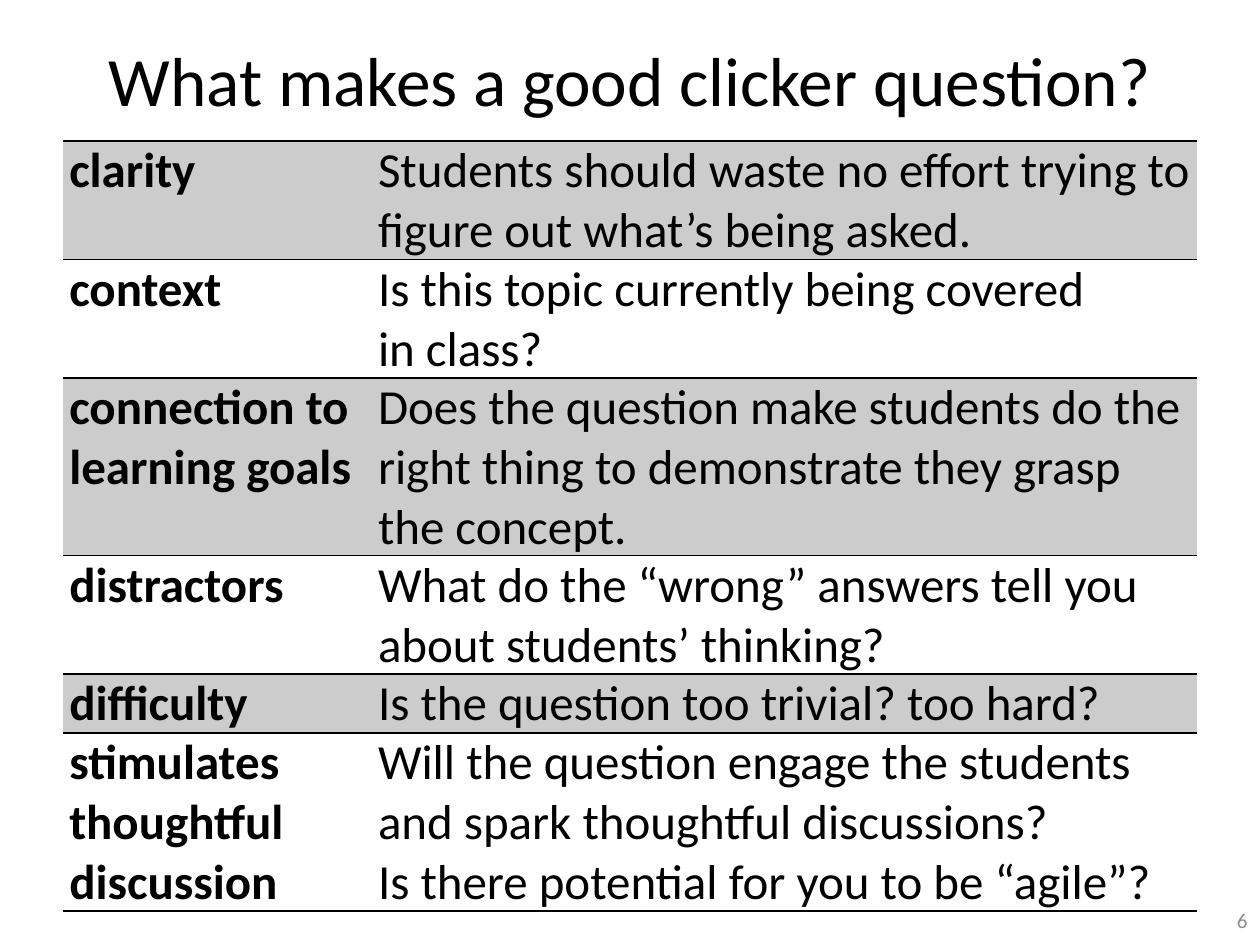
"""Build the slide listing what makes a good clicker question."""
import pptx
import pptx.dml.color
import pptx.enum.text
import pptx.util
from lxml import etree
from pptx.oxml.ns import qn
from pptx.util import Inches

BLACK = pptx.dml.color.RGBColor(0x00, 0x00, 0x00)
GREY = pptx.dml.color.RGBColor(0x8C, 0x8C, 0x8C)
BAND = pptx.dml.color.RGBColor(0xCC, 0xCC, 0xCC)
ALIGN = pptx.enum.text.PP_ALIGN
ANCHOR = pptx.enum.text.MSO_ANCHOR

LINE_HEIGHT = 0.47
CRITERIA = [
    ("clarity", "Students should waste no effort trying to figure out what’s being asked.", 2),
    ("context", "Is this topic currently being covered \nin class?", 2),
    ("connection to learning goals",
     "Does the question make students do the right thing to demonstrate they grasp the concept.", 3),
    ("distractors", "What do the “wrong” answers tell you about students’ thinking?", 2),
    ("difficulty", "Is the question too trivial? too hard?", 1),
    ("stimulates thoughtful discussion",
     "Will the question engage the students and spark thoughtful discussions?\n"
     "Is there potential for you to be “agile”?", 3),
]


class SlideBuilder:
    """Hold the style and the current slide."""

    font = "Calibri"

    def __init__(self, prs):
        self.s = prs.slides.add_slide(prs.slide_layouts[5])

    def set_text(self, tf, text, size, color=BLACK, bold=False, align=ALIGN.LEFT):
        """Fill a text frame with one formatted paragraph."""
        tf.word_wrap = True
        p = tf.paragraphs[0]
        p.text = text
        p.alignment = align
        for r in p.runs:
            r.font.name = self.font
            r.font.size = pptx.util.Pt(size)
            r.font.bold = bold
            r.font.color.rgb = color

    def title(self, text, left, top, width, height):
        """Place the title placeholder."""
        sp = self.s.shapes.title
        sp.left, sp.top, sp.width, sp.height = map(Inches, (left, top, width, height))
        sp.text_frame.vertical_anchor = ANCHOR.MIDDLE
        self.set_text(sp.text_frame, text, 39.6, align=ALIGN.CENTER)

    def page_number(self, text, left, top, width, height):
        """Add the page number."""
        sp = self.s.shapes.add_textbox(*map(Inches, (left, top, width, height)))
        sp.text_frame.vertical_anchor = ANCHOR.MIDDLE
        self.set_text(sp.text_frame, text, 12, GREY, align=ALIGN.RIGHT)

    def borders(self, cell):
        """Rule a cell above and below only."""
        tc_pr = cell._tc.get_or_add_tcPr()
        for side in ("lnL", "lnR", "lnT", "lnB"):
            ln = etree.SubElement(tc_pr, qn(f"a:{side}"), w=str(pptx.util.Pt(1)))
            if side in ("lnL", "lnR"):
                etree.SubElement(ln, qn("a:noFill"))
            else:
                fill = etree.SubElement(ln, qn("a:solidFill"))
                etree.SubElement(fill, qn("a:srgbClr"), val=str(BLACK))

    def table(self, rows, left, top, widths):
        """Add a banded table with bold row names."""
        height = LINE_HEIGHT * sum(lines for _, _, lines in rows)
        table = self.s.shapes.add_table(
            len(rows), len(widths), Inches(left), Inches(top),
            Inches(sum(widths)), Inches(height)).table
        table.first_row = table.horz_banding = False
        for column, width in zip(table.columns, widths):
            column.width = Inches(width)
        for i, (name, question, lines) in enumerate(rows):
            table.rows[i].height = Inches(LINE_HEIGHT * lines)
            for j, text in enumerate((name, question)):
                cell = table.cell(i, j)
                cell.margin_left = Inches(0.05 if j == 0 else 0)
                cell.margin_right = cell.margin_top = cell.margin_bottom = 0
                cell.vertical_anchor = ANCHOR.MIDDLE if j == 1 and i >= 4 else ANCHOR.TOP
                self.borders(cell)
                if i % 2 == 0:
                    cell.fill.solid()
                    cell.fill.fore_color.rgb = BAND
                else:
                    cell.fill.background()
                self.set_text(cell.text_frame, text, 28, bold=j == 0)


def main():
    """Build and save the presentation."""
    prs = pptx.Presentation()
    prs.slide_width, prs.slide_height = Inches(10), Inches(7.5)
    slide = SlideBuilder(prs)
    slide.title("What makes a good clicker question?", 0.5, 0, 9, 1.25)
    slide.page_number("6", 7.67, 7.1, 2.33, 0.4)
    slide.table(CRITERIA, 0.5, 1.12, (2.5, 6.5))
    prs.save("out.pptx")


if __name__ == "__main__":
    main()
